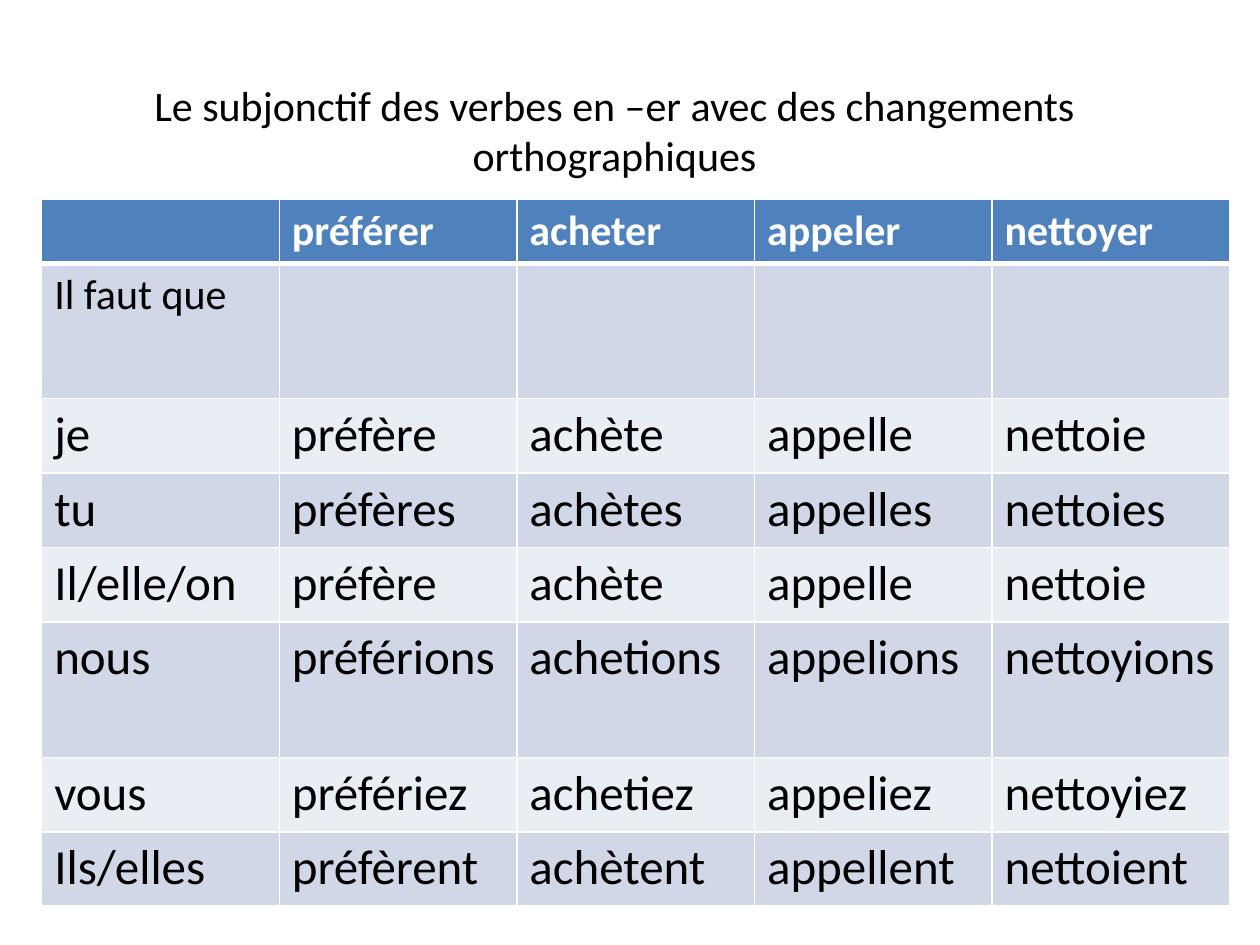
from lxml import etree
from pptx import Presentation
from pptx import util as u
from pptx.dml.color import RGBColor
from pptx.enum import text
from pptx.oxml import ns

FONT = "Calibri"
COLORS = {
    "header": "4F81BD",
    "band_dark": "D0D8E8",
    "band_light": "E9EDF4",
    "white": "FFFFFF",
    "black": "000000",
}
TITLE = "Le subjonctif des verbes en –er avec des changements orthographiques"
CONJUGATIONS = [
    ["", "préférer", "acheter", "appeler", "nettoyer"],
    ["Il faut que", "", "", "", ""],
    ["je", "préfère", "achète", "appelle", "nettoie"],
    ["tu", "préfères", "achètes", "appelles", "nettoies"],
    ["Il/elle/on", "préfère", "achète", "appelle", "nettoie"],
    ["nous", "préférions", "achetions", "appelions", "nettoyions"],
    ["vous", "préfériez", "achetiez", "appeliez", "nettoyiez"],
    ["Ils/elles", "préfèrent", "achètent", "appellent", "nettoient"],
]
COLUMN_WIDTH = 4.79
ROW_HEIGHTS = [1.27, 2.73, 1.5, 1.5, 1.5, 2.73, 1.5, 1.5]


def color(name):
    return RGBColor.from_string(COLORS[name])


def format_runs(p, size, color_name, bold=False):
    for r in p.runs:
        r.font.name = FONT
        r.font.size = u.Pt(size)
        r.font.bold = bold
        r.font.color.rgb = color(color_name)


def set_borders(cell, bottom, top):
    """White lines on all sides; must run before the cell's fill is set."""
    tc_pr = cell._tc.get_or_add_tcPr()
    for side, width in (("L", 1), ("R", 1), ("T", top), ("B", bottom)):
        ln = etree.SubElement(tc_pr, ns.qn(f"a:ln{side}"), w=str(u.Pt(width)))
        fill = etree.SubElement(ln, ns.qn("a:solidFill"))
        etree.SubElement(fill, ns.qn("a:srgbClr"), val=COLORS["white"])


def add_title(s):
    box = s.shapes.add_textbox(u.Cm(0.64), u.Cm(1.47), u.Cm(23.5), u.Cm(2.31))
    tf = box.text_frame
    tf.word_wrap = True
    tf.auto_size = text.MSO_AUTO_SIZE.SHAPE_TO_FIT_TEXT
    tf.text = TITLE
    p = tf.paragraphs[0]
    p.alignment = text.PP_ALIGN.CENTER
    format_runs(p, 24, "black")


def add_conjugation_table(s):
    n_rows, n_cols = len(CONJUGATIONS), len(CONJUGATIONS[0])
    table = s.shapes.add_table(
        n_rows, n_cols, u.Cm(0.84), u.Cm(4.02),
        u.Cm(COLUMN_WIDTH * n_cols), u.Cm(sum(ROW_HEIGHTS))).table
    for column in table.columns:
        column.width = u.Cm(COLUMN_WIDTH)
    for i, (row, height) in enumerate(zip(table.rows, ROW_HEIGHTS)):
        row.height = u.Cm(height)
        header = i == 0
        band = "header" if header else "band_dark" if i % 2 else "band_light"
        for cell, word in zip(row.cells, CONJUGATIONS[i]):
            set_borders(cell, bottom=3 if header else 1, top=3 if i == 1 else 1)
            cell.fill.solid()
            cell.fill.fore_color.rgb = color(band)
            cell.text_frame.text = word
            format_runs(cell.text_frame.paragraphs[0], 24 if i < 2 else 28,
                        "white" if header else "black", header)


def main():
    prs = Presentation()
    prs.slide_width, prs.slide_height = u.Cm(25.4), u.Cm(19.05)
    s = prs.slides.add_slide(prs.slide_layouts[6])

    # Verb table, then the heading above it
    add_conjugation_table(s)
    add_title(s)

    prs.save("out.pptx")


if __name__ == "__main__":
    main()
